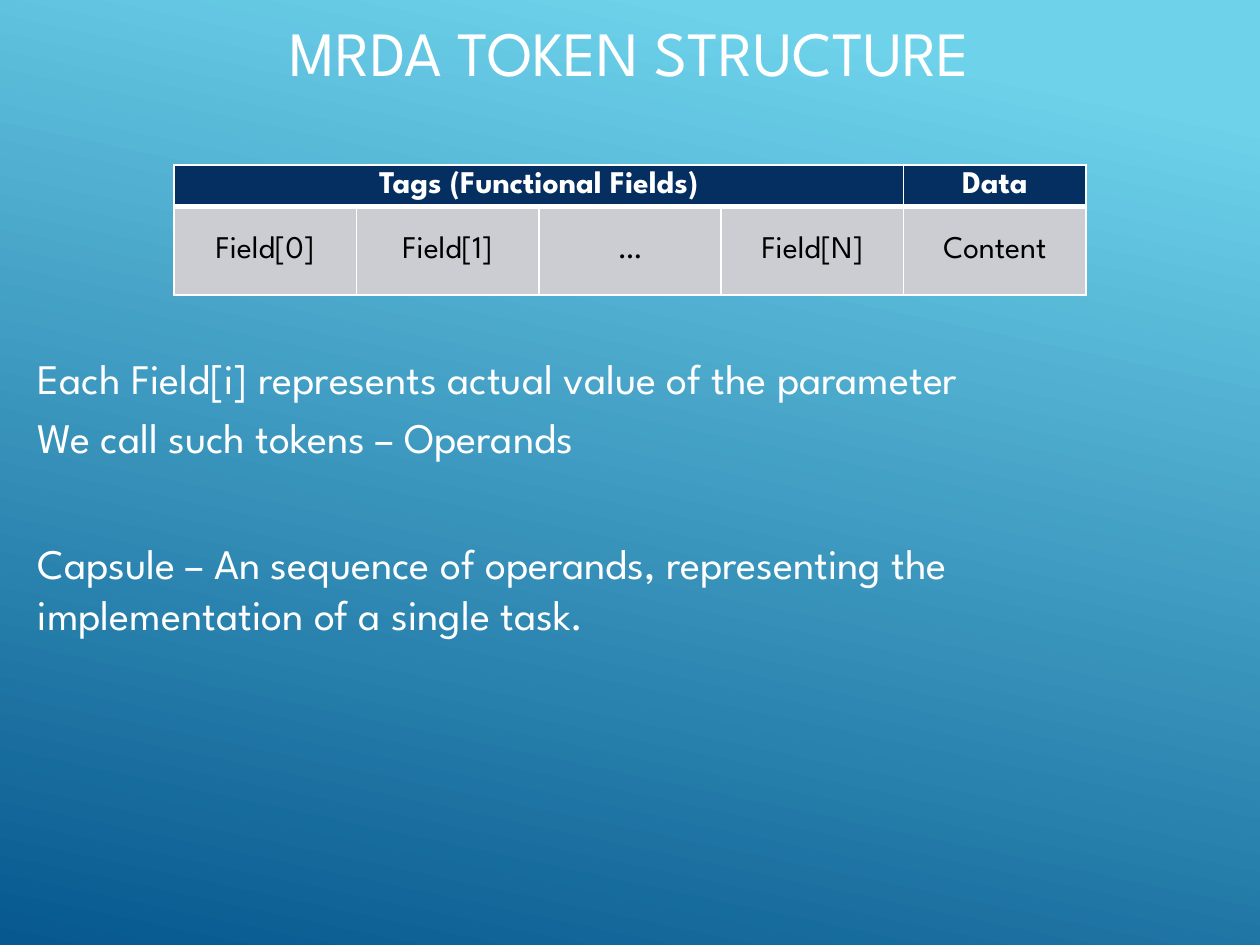
from lxml import etree
from pptx import Presentation
from pptx.dml.color import RGBColor
from pptx.enum.text import MSO_ANCHOR, PP_ALIGN
from pptx.oxml.ns import qn
from pptx.util import Pt

TOP, MIDDLE, BOTTOM = MSO_ANCHOR.TOP, MSO_ANCHOR.MIDDLE, MSO_ANCHOR.BOTTOM
LEFT, CENTER = PP_ALIGN.LEFT, PP_ALIGN.CENTER

FONT = "League Spartan"
WHITE = RGBColor(0xFF, 0xFF, 0xFF)
BLACK = RGBColor(0, 0, 0)
NAVY = RGBColor(0x05, 0x2F, 0x61)
GREY = RGBColor(0xCC, 0xCD, 0xD2)
SKY = RGBColor(0x6E, 0xD2, 0xEB)
OCEAN = RGBColor(0x06, 0x58, 0x8E)


def set_attributes(target, values):
    for name, value in values.items():
        setattr(target, name, value)


def write_paragraph(paragraph, text, size, color=WHITE, bold=False, **layout):
    set_attributes(paragraph, layout)
    run = paragraph.add_run()
    run.text = text
    set_attributes(run.font, {"name": FONT, "size": Pt(size), "bold": bold})
    run.font.color.rgb = color


def paint_background(slide):
    fill = slide.background.fill
    fill.gradient()
    fill.gradient_angle = 360 - 102
    for stop, (position, color) in zip(fill.gradient_stops, ((0.1, SKY), (1, OCEAN))):
        stop.position = position
        stop.color.rgb = color


def add_text(slide, box, lines, size, frame_format=None, **layout):
    frame = slide.shapes.add_textbox(*map(Pt, box)).text_frame
    set_attributes(frame, {"word_wrap": True, **(frame_format or {})})
    for index, line in enumerate(lines):
        paragraph = frame.add_paragraph() if index else frame.paragraphs[0]
        write_paragraph(paragraph, line, size, **layout)


def add_borders(cell, widths):
    properties = cell._tc.get_or_add_tcPr()
    for side, width in widths.items():
        line = etree.SubElement(properties, qn(f"a:ln{side}"), w=str(Pt(width)))
        fill = etree.SubElement(line, qn("a:solidFill"))
        etree.SubElement(fill, qn("a:srgbClr"), val=str(WHITE))


def add_token_table(slide, rows, left, top, column_width, row_heights):
    column_count = len(rows[0])
    shape = slide.shapes.add_table(
        len(rows), column_count, Pt(left), Pt(top),
        Pt(column_width * column_count), Pt(sum(row_heights)))
    table = shape.table
    for column in table.columns:
        column.width = Pt(column_width)
    for row_index, texts in enumerate(rows):
        table.rows[row_index].height = Pt(row_heights[row_index])
        header = row_index == 0
        for column_index, text in enumerate(texts):
            cell = table.cell(row_index, column_index)
            set_attributes(cell, {"vertical_anchor": MIDDLE,
                                  "margin_top": Pt(1), "margin_bottom": Pt(1)})
            # The thick rule separates the header from the fields
            add_borders(cell, {"L": 1, "R": 1, "T": 1 if header else 3,
                               "B": 3 if header else 1})
            cell.fill.solid()
            cell.fill.fore_color.rgb = NAVY if header else GREY
            if text:
                write_paragraph(cell.text_frame.paragraphs[0], text, 18,
                                WHITE if header else BLACK, header, alignment=CENTER)
    # The tag heading spans all columns but the data column
    table.cell(0, 0).merge(table.cell(0, column_count - 2))


def main():
    presentation = Presentation()
    set_attributes(presentation, {"slide_width": Pt(720), "slide_height": Pt(540)})
    slide = presentation.slides.add_slide(presentation.slide_layouts[6])
    paint_background(slide)

    # Title
    add_text(slide, (0, 0, 720, 54.72), ["MRDA TOKEN STRUCTURE"], 36,
             {"vertical_anchor": BOTTOM}, alignment=CENTER)

    # Token layout
    add_token_table(slide, [
        ["Tags (Functional Fields)", "", "", "", "Data"],
        ["Field[0]", "Field[1]", "…", "Field[N]", "Content"],
    ], 99.36, 94.2, 104.26, (24, 50.4))

    # Explanations
    body = {"alignment": LEFT, "space_before": Pt(4.8)}
    add_text(slide, (21.6, 198, 671.76, 89.28), [
        "Each Field[i] represents actual value of the parameter",
        "We call such tokens – Operands",
    ], 24, {"vertical_anchor": TOP, "margin_left": 0, "margin_right": Pt(1.44)}, **body)
    add_text(slide, (14.4, 303.84, 686.16, 65.52), [
        "Capsule – An sequence of operands, representing the implementation of a single task.",
    ], 24, {"vertical_anchor": TOP}, **body)

    presentation.save("out.pptx")


if __name__ == "__main__":
    main()
